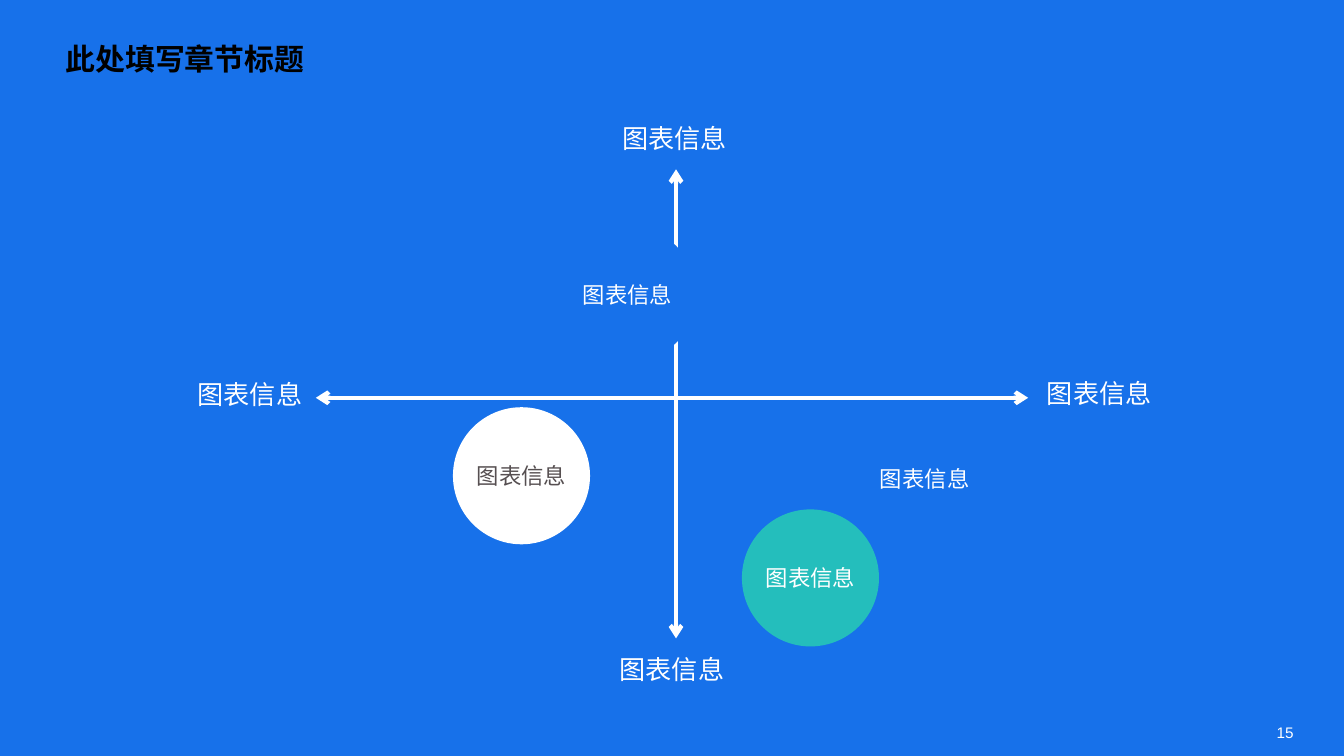
from lxml.etree import SubElement
from pptx import Presentation
from pptx.dml.color import RGBColor
from pptx.enum.shapes import MSO_CONNECTOR, MSO_SHAPE
from pptx.enum.text import MSO_ANCHOR, PP_ALIGN
from pptx.oxml.ns import qn
from pptx.util import Inches, Pt

BLUE, WHITE, TEAL, GREY, BLACK = "1771EA", "FFFFFF", "24BEBC", "564F51", "000000"
FONT = "Noto Sans CJK SC"
TITLE = "此处填写章节标题"
LABEL = "图表信息"
PAGE_NUMBER = "15"
PAGE_WIDTH = 10
PAGE_HEIGHT = PAGE_WIDTH * 9 / 16
CIRCLE_SIZE = 1.02
LABEL_WIDTH, LABEL_HEIGHT = 0.88, 0.3

AXES = [(2.35, 2.96, 7.65, 2.96), (5.03, 1.26, 5.03, 4.75)]
AXIS_LABELS = [
    (LABEL, 1.36, 2.77, 1),
    (LABEL, 7.54, 2.76, 1.28),
    (LABEL, 4.4, 0.86, 1.24),
    (LABEL, 4.38, 4.81, 1.24),
]
CIRCLES = [
    (LABEL, 4.16, 1.68, BLUE, WHITE),
    (LABEL, 3.37, 3.03, WHITE, GREY),
    (LABEL, 6.37, 3.05, BLUE, WHITE),
    (LABEL, 5.52, 3.79, TEAL, WHITE),
]


def paint(color_format, color):
    color_format.rgb = RGBColor.from_string(color)


def add_text(page, text, left, top, width, height, size, color=WHITE,
             align=PP_ALIGN.CENTER, font=FONT, bold=False, wrap=True,
             inset=True, anchor=MSO_ANCHOR.TOP):
    box = page.shapes.add_textbox(*map(Inches, (left, top, width, height)))
    frame = box.text_frame
    frame.word_wrap = wrap
    frame.vertical_anchor = anchor
    if not inset:
        frame.margin_left = frame.margin_right = 0
        frame.margin_top = frame.margin_bottom = 0
    para = frame.paragraphs[0]
    para.text = text
    para.alignment = align
    para.font.size = Pt(size)
    para.font.bold = bold
    paint(para.font.color, color)
    para.font.name = font
    SubElement(para._p.pPr.find(qn("a:defRPr")), qn("a:ea"), typeface=font)


def add_axis(page, ends):
    axis = page.shapes.add_connector(MSO_CONNECTOR.STRAIGHT, *map(Inches, ends))
    paint(axis.line.color, WHITE)
    axis.line.width = Pt(2.25)
    properties = axis._element.spPr
    for end in ("a:headEnd", "a:tailEnd"):
        SubElement(properties.find(qn("a:ln")), qn(end), type="arrow")
    SubElement(properties, qn("a:effectLst"))


def add_circle(page, text, left, top, fill, color):
    circle = page.shapes.add_shape(
        MSO_SHAPE.OVAL, *map(Inches, (left, top, CIRCLE_SIZE, CIRCLE_SIZE)))
    circle.shadow.inherit = False
    circle.fill.solid()
    paint(circle.fill.fore_color, fill)
    circle.line.fill.background()
    add_text(page, text, left + (CIRCLE_SIZE - LABEL_WIDTH) / 2,
             top + (CIRCLE_SIZE - LABEL_HEIGHT) / 2,
             LABEL_WIDTH, LABEL_HEIGHT, 12, color, wrap=False)


def main():
    deck = Presentation()
    deck.slide_width, deck.slide_height = Inches(PAGE_WIDTH), Inches(PAGE_HEIGHT)
    page = deck.slides.add_slide(deck.slide_layouts[6])
    page.background.fill.solid()
    paint(page.background.fill.fore_color, BLUE)

    add_text(page, PAGE_NUMBER, 9.5, 5.38, 0.5, 0.14, 8.2, align=PP_ALIGN.LEFT,
             font="Arial", inset=False, anchor=MSO_ANCHOR.MIDDLE)
    for ends in AXES:
        add_axis(page, ends)
    for text, left, top, width in AXIS_LABELS:
        add_text(page, text, left, top, width, 0.34, 14)
    for circle in CIRCLES:
        add_circle(page, *circle)
    add_text(page, TITLE, 0.49, 0.3, 9.19, 0.64, 16, BLACK,
             align=PP_ALIGN.LEFT, bold=True, inset=False)
    deck.save("out.pptx")


if __name__ == "__main__":
    main()
